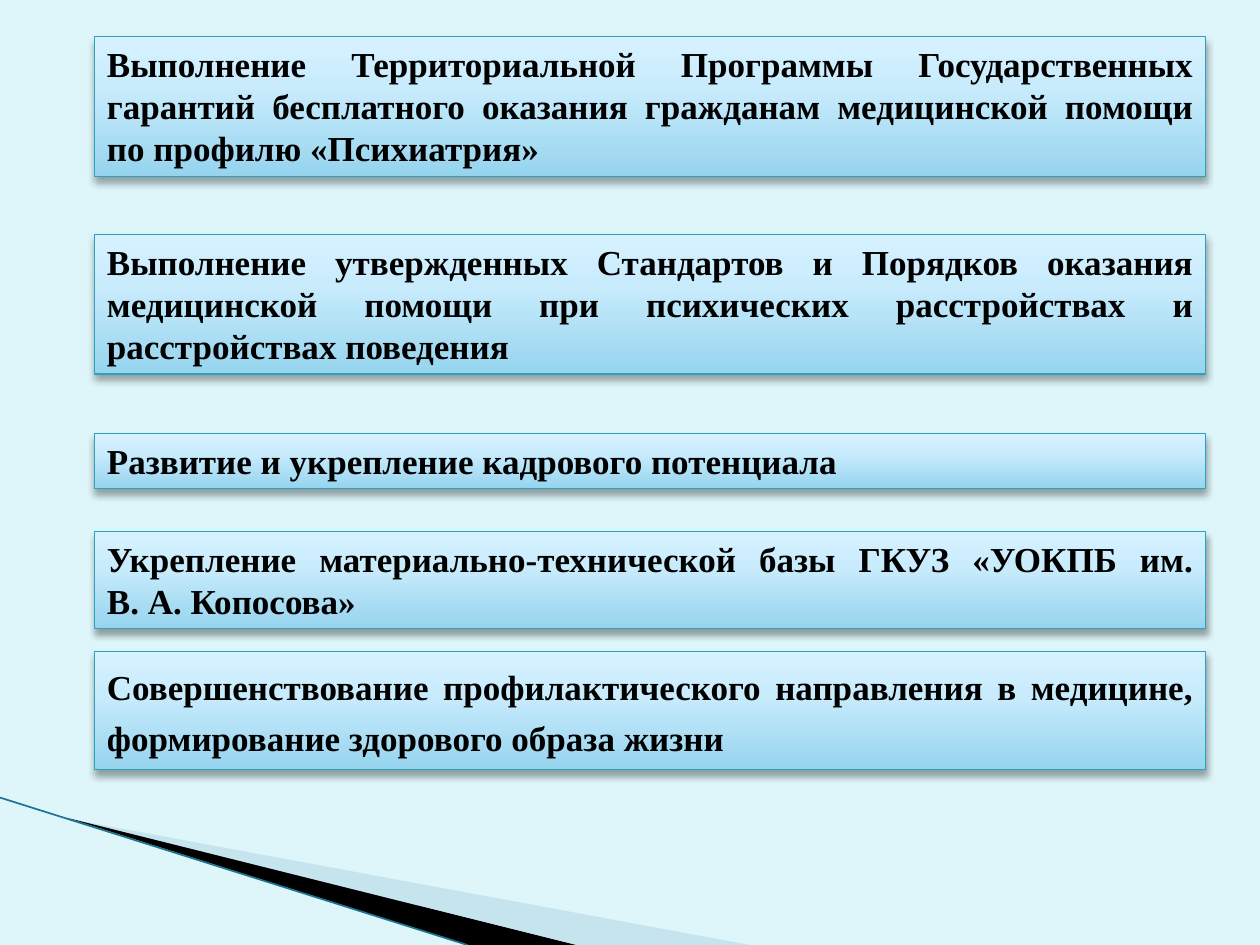
from dataclasses import dataclass
from typing import Any

from pptx import Presentation
from pptx.dml.color import RGBColor
from pptx.enum.shapes import MSO_CONNECTOR as CONN, MSO_SHAPE as SHAPE
from pptx.enum.text import MSO_ANCHOR as ANCHOR, MSO_AUTO_SIZE as FIT, PP_ALIGN as ALIGN
from pptx.oxml import parse_xml
from pptx.oxml.ns import nsdecls
from pptx.util import Inches, Pt

COLORS = {
    "background": "DEF5FA",
    "wedge": "A0CBDC",
    "black": "000000",
    "edge": "1B7490",
    "border": "2DA2BF",
    "bottom": "96D4EE",
    "middle": "C9ECFC",
    "top": "D7F2FF",
}
COLS, ROWS = 100, 75
LEFT, WIDTH = 7.5, 88.2
GOALS = [
    (2.9, 11.1, ALIGN.JUSTIFY, 1, "Выполнение Территориальной Программы Государственных гарантий "
     "бесплатного оказания гражданам медицинской помощи по профилю «Психиатрия»"),
    (18.6, 11.1, ALIGN.JUSTIFY, 1, "Выполнение утвержденных Стандартов и Порядков оказания "
     "медицинской помощи при психических расстройствах и расстройствах поведения"),
    (34.4, 4.4, ALIGN.LEFT, 1, "Развитие и укрепление кадрового потенциала"),
    (42.2, 7.7, ALIGN.JUSTIFY, 1, "Укрепление материально-технической базы ГКУЗ «УОКПБ им.\n"
     "В. А. Копосова»"),
    (51.7, 9.4, ALIGN.JUSTIFY, 1.2, "Совершенствование профилактического направления в медицине, "
     "формирование здорового образа жизни"),
]


def rgb(name):
    return RGBColor.from_string(COLORS[name])


@dataclass
class Deck:
    prs: Any
    s: Any
    font: str = "Times New Roman"
    size: int = 20

    def x(self, cols):
        return round(self.prs.slide_width * cols / COLS)

    def y(self, rows):
        return round(self.prs.slide_height * rows / ROWS)

    def background(self, color):
        fill = self.s.background.fill
        fill.solid()
        fill.fore_color.rgb = rgb(color)

    def wedge(self, points, color, opacity=100):
        first, *rest = [(self.x(c), self.y(r)) for c, r in points]
        builder = self.s.shapes.build_freeform(*first)
        builder.add_line_segments(rest, close=True)
        sp = builder.convert_to_shape()
        sp.shadow.inherit = False
        sp.fill.solid()
        sp.fill.fore_color.rgb = rgb(color)
        sp.line.fill.background()
        if opacity < 100:
            clr = sp.fill._xPr.solidFill.srgbClr
            clr.append(parse_xml(f'<a:alpha {nsdecls("a")} val="{opacity * 1000}"/>'))

    def line(self, start, end, color, width):
        (c1, r1), (c2, r2) = start, end
        ln = self.s.shapes.add_connector(
            CONN.STRAIGHT, self.x(c1), self.y(r1), self.x(c2), self.y(r2))
        ln.line.color.rgb = rgb(color)
        ln.line.width = Pt(width)
        ln._element.spPr.append(parse_xml(f'<a:effectLst {nsdecls("a")}/>'))

    def gradient(self, sp):
        stops = "".join(
            f'<a:gs pos="{pos * 1000}"><a:srgbClr val="{COLORS[name]}"/></a:gs>'
            for pos, name in ((0, "bottom"), (65, "middle"), (100, "top")))
        sp._element.spPr.insert(2, parse_xml(
            f'<a:gradFill {nsdecls("a")}><a:gsLst>{stops}</a:gsLst>'
            '<a:lin ang="16200000" scaled="0"/></a:gradFill>'))

    def drop_shadow(self, sp):
        sp._element.spPr.append(parse_xml(
            f'<a:effectLst {nsdecls("a")}><a:outerShdw blurRad="{Pt(4)}" dist="{Pt(3)}" '
            f'dir="5400000" rotWithShape="0"><a:srgbClr val="{COLORS["black"]}">'
            '<a:alpha val="35000"/></a:srgbClr></a:outerShdw></a:effectLst>'))

    def goal(self, top, height, align, spacing, text):
        sp = self.s.shapes.add_shape(
            SHAPE.RECTANGLE, self.x(LEFT), self.y(top), self.x(WIDTH), self.y(height))
        self.gradient(sp)
        sp.line.color.rgb = rgb("border")
        sp.line.width = Pt(0.75)
        self.drop_shadow(sp)
        tf = sp.text_frame
        tf.word_wrap = True
        tf.auto_size = FIT.SHAPE_TO_FIT_TEXT if spacing == 1 else FIT.NONE
        tf.vertical_anchor = ANCHOR.TOP
        p = tf.paragraphs[0]
        p.alignment = align
        p.line_spacing = spacing
        for i, part in enumerate(text.split("\n")):
            if i:
                p.add_line_break()
            r = p.add_run()
            r.text = part
            r.font.name = self.font
            r.font.size = Pt(self.size)
            r.font.bold = True
            r.font.color.rgb = rgb("black")


def main():
    prs = Presentation()
    prs.slide_width, prs.slide_height = Inches(10), Inches(7.5)
    deck = Deck(prs, prs.slides.add_slide(prs.slide_layouts[6]))
    deck.background("background")
    deck.wedge([(5.5, 65), (59.5, 75), (45.6, 75)], "wedge", 40)
    deck.wedge([(5.3, 64.9), (45.7, 75), (37.2, 75)], "black")
    deck.line((0, 63.3), (37.1, 75), "edge", 0.95)
    for goal in GOALS:
        deck.goal(*goal)
    prs.save("out.pptx")


if __name__ == "__main__":
    main()
